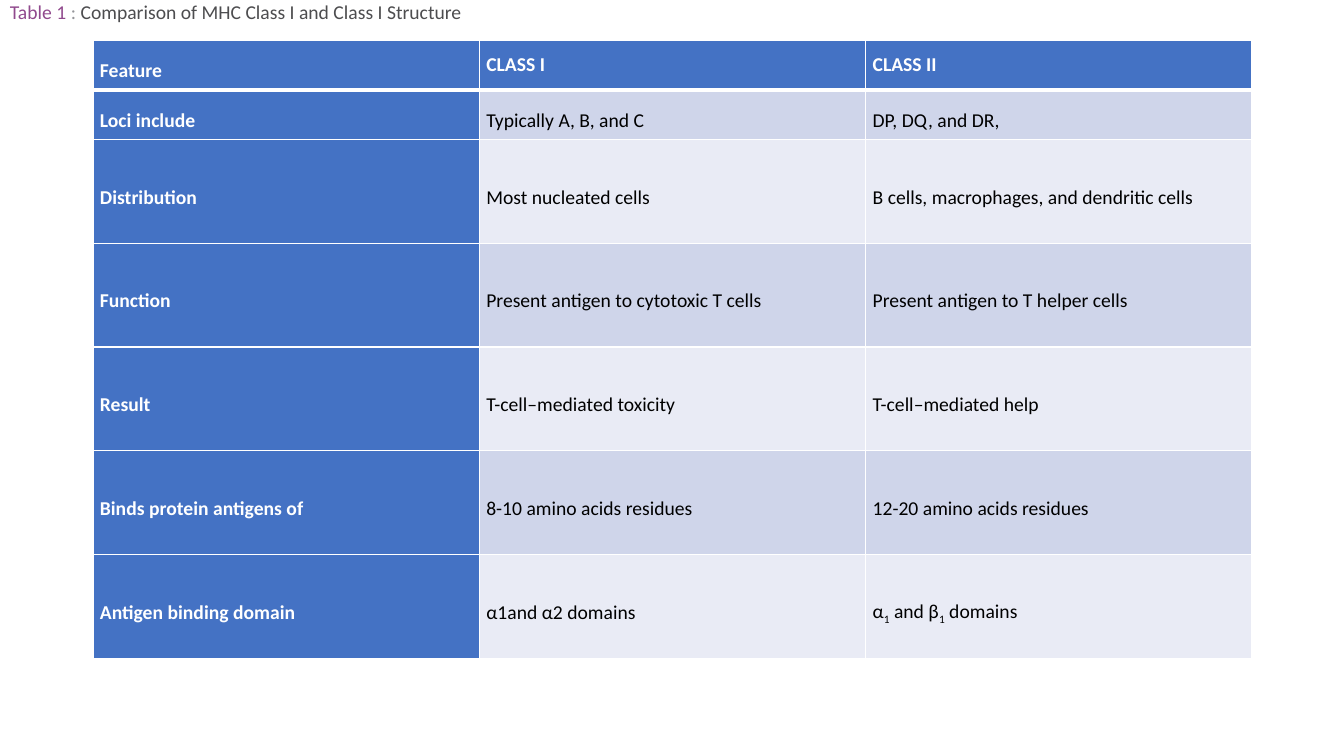
from lxml.etree import SubElement
from pptx import Presentation
from pptx.dml.color import RGBColor
from pptx.enum.text import MSO_ANCHOR as Anchor
from pptx.oxml.ns import qn
from pptx.util import Pt

# Content
CAPTION_PARTS = [
    ("Table 1 ", RGBColor(0x90, 0x49, 0x8D)),
    (": ", RGBColor(0x94, 0x95, 0x99)),
    ("Comparison of MHC Class I and Class I Structure", RGBColor(0x4D, 0x4D, 0x4F)),
]
# A cell is a string, or a list of (text, is_subscript) parts
ROWS = [
    ("Feature", "CLASS I", "CLASS II"),
    ("Loci include", "Typically A, B, and C", "DP, DQ, and DR,"),
    ("Distribution", "Most nucleated cells",
     "B cells, macrophages, and dendritic cells"),
    ("Function", "Present antigen to cytotoxic T cells",
     "Present antigen to T helper cells"),
    ("Result", "T-cell–mediated toxicity", "T-cell–mediated help"),
    ("Binds protein antigens of", "8-10 amino acids residues",
     "12-20 amino acids residues"),
    ("Antigen binding domain", "α1and α2 domains",
     [("α", False), ("1", True), (" and β", False), ("1", True),
      (" domains", False)]),
]

# Format
WHITE = RGBColor(0xFF, 0xFF, 0xFF)
BLACK = RGBColor(0x00, 0x00, 0x00)
BLUE = RGBColor(0x44, 0x72, 0xC4)
BANDS = [RGBColor(0xE9, 0xEB, 0xF5), RGBColor(0xCF, 0xD5, 0xEA)]
FONT = {"name": "Calibri", "size": Pt(14)}
CELL_FORMAT = {"margin_left": Pt(5), "margin_right": Pt(5),
               "margin_top": 0, "margin_bottom": 0}
CAPTION_FORMAT = {"word_wrap": True, "vertical_anchor": Anchor.TOP,
                  "margin_left": Pt(7.2), "margin_top": 0}
TABLE_LEFT, TABLE_TOP = 66.4, 29
COLUMN_WIDTH = 276
SHORT_ROW, TALL_ROW = 35.3, 74.16
SHORT_ROW_COUNT = 2
THIN, THICK = 1, 3


def apply(target, values):
    for name, value in values.items():
        setattr(target, name, value)


def add_run(paragraph, text, color, bold=False):
    run = paragraph.add_run()
    run.text = text
    apply(run.font, FONT | {"bold": bold})
    run.font.color.rgb = color
    return run


def add_borders(cell, widths):
    properties = cell._tc.get_or_add_tcPr()
    for side, width in widths.items():
        line = SubElement(properties, qn(f"a:ln{side}"), w=str(Pt(width)))
        fill = SubElement(line, qn("a:solidFill"))
        SubElement(fill, qn("a:srgbClr"), val=str(WHITE))


def fill_cell(cell, content, row, column):
    is_heading = row == 0 or column == 0
    apply(cell, CELL_FORMAT)
    cell.vertical_anchor = Anchor.TOP if row == 0 and column else Anchor.MIDDLE
    add_borders(cell, {"L": THIN, "R": THIN,
                       "T": THICK if row == 1 else THIN,
                       "B": THICK if row == 0 else THIN})
    cell.fill.solid()
    cell.fill.fore_color.rgb = BLUE if is_heading else BANDS[row % 2]
    paragraph = cell.text_frame.paragraphs[0]
    paragraph.line_spacing = 1.5
    parts = [(content, False)] if isinstance(content, str) else content
    for text, is_subscript in parts:
        run = add_run(paragraph, text, WHITE if is_heading else BLACK, is_heading)
        if is_subscript:
            run.font._element.set("baseline", "-25000")


def main():
    presentation = Presentation()
    presentation.slide_width, presentation.slide_height = Pt(960), Pt(540)
    slide = presentation.slides.add_slide(presentation.slide_layouts[6])

    # Comparison table
    heights = [SHORT_ROW if row < SHORT_ROW_COUNT else TALL_ROW
               for row in range(len(ROWS))]
    column_count = len(ROWS[0])
    table = slide.shapes.add_table(
        len(ROWS), column_count, Pt(TABLE_LEFT), Pt(TABLE_TOP),
        Pt(COLUMN_WIDTH * column_count), Pt(sum(heights))).table
    for column in table.columns:
        column.width = Pt(COLUMN_WIDTH)
    for row, (contents, height) in enumerate(zip(ROWS, heights)):
        table.rows[row].height = Pt(height)
        for column, content in enumerate(contents):
            fill_cell(table.cell(row, column), content, row, column)

    # Caption
    caption = slide.shapes.add_textbox(0, 0, Pt(960), Pt(36)).text_frame
    apply(caption, CAPTION_FORMAT)
    for text, color in CAPTION_PARTS:
        add_run(caption.paragraphs[0], text, color)

    presentation.save("out.pptx")


if __name__ == "__main__":
    main()
